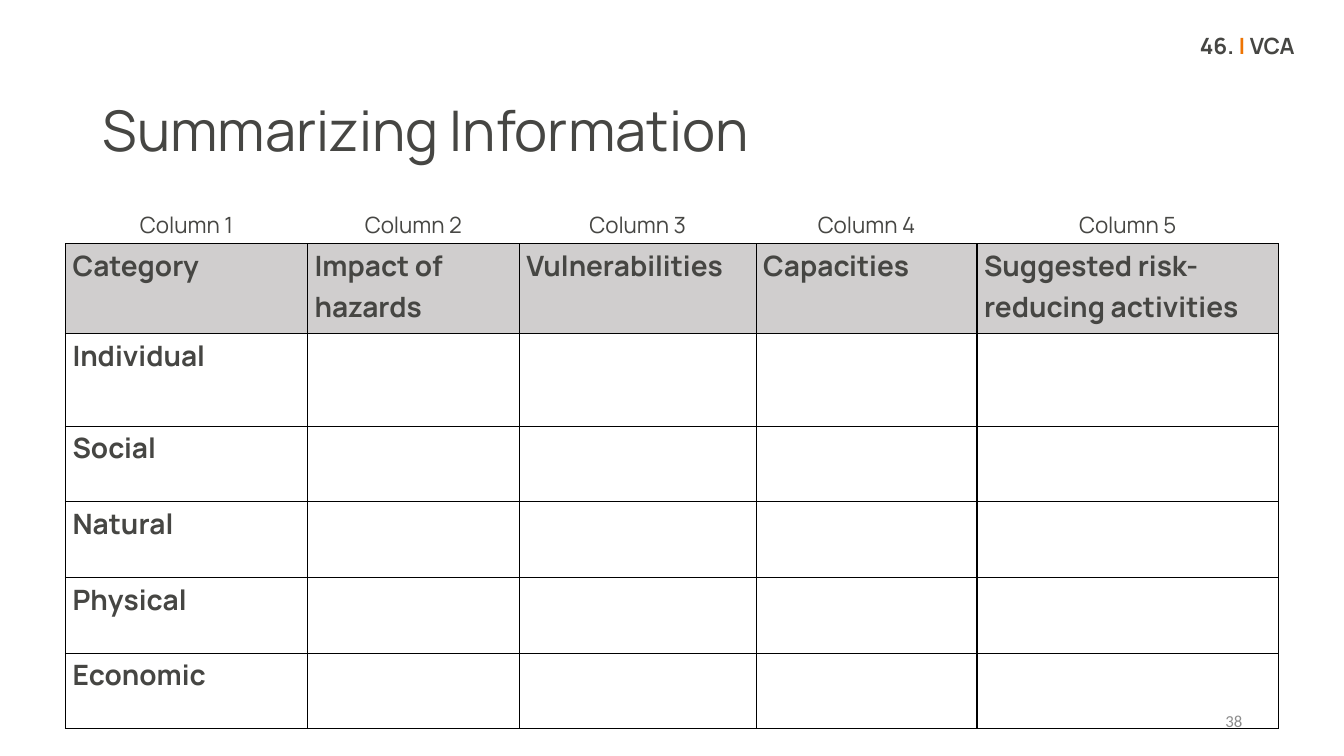
from lxml.etree import SubElement
from pptx import Presentation
from pptx.dml.color import RGBColor
from pptx.enum.text import MSO_ANCHOR, PP_ALIGN
from pptx.oxml.ns import qn
from pptx.util import Inches, Pt

COLUMN_WIDTHS = [2.4, 2.1, 2.35, 2.19, 2.99]
ROW_HEIGHTS = [0.36, 0.89, 0.92] + [0.75] * 4
HEADINGS = ["Category", "Impact of hazards", "Vulnerabilities", "Capacities",
            "Suggested risk-reducing activities"]
CATEGORIES = ["Individual", "Social", "Natural", "Physical", "Economic"]


def rgb(value):
    return RGBColor.from_string(value)


def write(tf, runs, size=20, bold=False, color="464643", font="Manrope",
          align=PP_ALIGN.LEFT, spacing=1.0, after=0):
    """Fill the first paragraph with a string or with (text, color) pairs."""
    p = tf.paragraphs[0]
    p.alignment, p.line_spacing, p.space_after = align, spacing, Pt(after)
    for text, run_color in [(runs, color)] if isinstance(runs, str) else runs:
        r = p.add_run()
        r.text = text
        r.font.name, r.font.size, r.font.bold = font, Pt(size), bold
        r.font.color.rgb = rgb(run_color)


class SlideBuilder:
    ink, orange, grey = "464643", "EE7402", "8C8C8C"
    header_fill, border = "D0CECE", "000000"

    def __init__(self, prs):
        self.s = prs.slides.add_slide(prs.slide_layouts[6])

    def text(self, runs, x, y, w, h, anchor=MSO_ANCHOR.TOP, **style):
        sp = self.s.shapes.add_textbox(Inches(x), Inches(y), Inches(w), Inches(h))
        tf = sp.text_frame
        tf.word_wrap, tf.vertical_anchor = True, anchor
        write(tf, runs, **style)

    def borders(self, cell, sides):
        """Draw the given sides (of LRTB) and hide the others."""
        tc_pr = cell._tc.get_or_add_tcPr()
        for side in "LRTB":
            ln = SubElement(tc_pr, qn(f"a:ln{side}"), w=str(Pt(1)))
            if side in sides:
                fill = SubElement(ln, qn("a:solidFill"))
                SubElement(fill, qn("a:srgbClr"), val=self.border)
            else:
                SubElement(ln, qn("a:noFill"))

    def cell(self, cell, text, sides="LRTB", fill=None, **style):
        cell.margin_left = cell.margin_right = Inches(0.07)
        cell.margin_top = cell.margin_bottom = 0
        self.borders(cell, sides)
        if fill:
            cell.fill.solid()
            cell.fill.fore_color.rgb = rgb(fill)
        else:
            cell.fill.background()
        if text:
            write(cell.text_frame, text, spacing=1.07, after=8, **style)

    def table(self, x, y):
        tbl = self.s.shapes.add_table(
            len(ROW_HEIGHTS), len(COLUMN_WIDTHS), Inches(x), Inches(y),
            Inches(sum(COLUMN_WIDTHS)), Inches(sum(ROW_HEIGHTS))).table
        tbl.first_row = tbl.horz_banding = False
        for column, width in zip(tbl.columns, COLUMN_WIDTHS):
            column.width = Inches(width)
        for row, height in zip(tbl.rows, ROW_HEIGHTS):
            row.height = Inches(height)
        for i, heading in enumerate(HEADINGS):
            self.cell(tbl.cell(0, i), f"Column {i + 1}", sides="B", size=16,
                      align=PP_ALIGN.CENTER)
            self.cell(tbl.cell(1, i), heading, fill=self.header_fill, bold=True)
            for j, category in enumerate(CATEGORIES, 2):
                self.cell(tbl.cell(j, i), category if i == 0 else "", bold=True)


def main():
    prs = Presentation()
    prs.slide_width, prs.slide_height = Inches(13.33), Inches(7.5)
    slide = SlideBuilder(prs)
    slide.table(0.65, 2.06)
    slide.text("Summarizing Information", 0.92, 0.97, 8.54, 0.72, size=40, spacing=0.9)
    slide.text([("46. ", slide.ink), ("| ", slide.orange), ("VCA", slide.ink)],
               7.98, 0.3, 4.96, 1.09, size=16, bold=True,
               align=PP_ALIGN.RIGHT, spacing=0.9)
    slide.text("38", 9.42, 6.95, 3, 0.4, anchor=MSO_ANCHOR.MIDDLE, size=12,
               color=slide.grey, font="Calibri", align=PP_ALIGN.RIGHT)
    prs.save("out.pptx")


if __name__ == "__main__":
    main()
